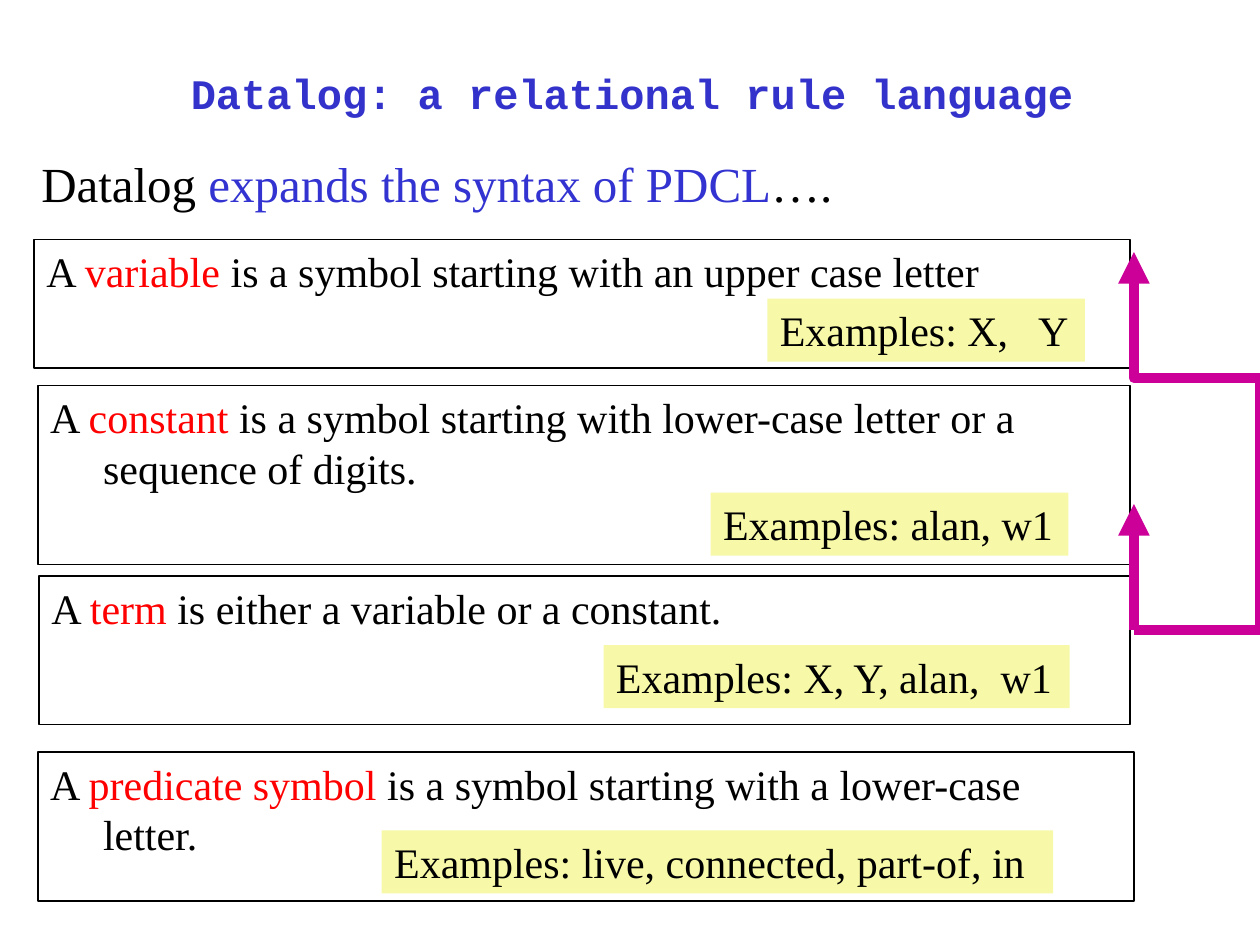
from lxml.etree import SubElement
from pptx import Presentation
from pptx.dml.color import RGBColor
from pptx.enum.shapes import MSO_SHAPE as Preset
from pptx.enum.text import MSO_ANCHOR as Anchor, PP_ALIGN as Align
from pptx.oxml.ns import qn
from pptx.util import Inches, Pt

THEME = {
    "title_font": "Courier New", "body_font": "Times New Roman",
    "body_size": 24, "lead_size": 28, "border": 1, "arrow": 6,
    "title": "3333CC", "lead": "3233D0", "term": "FF0000", "ink": "000000",
    "paper": "FFFFFF", "example": "F7F9A9", "link": "CC0099",
}
TITLE = "Datalog: a relational rule language"
LEAD = [("Datalog ", "ink"), ("expands the syntax of PDCL", "lead"), ("….", "ink")]

# term, rest of the definition, its box, example, example's (left, top, width)
DEFINITIONS = [
    ("variable", "is a symbol starting with an upper case letter",
     (0.27, 1.9, 8.7, 1.02), "X,   Y", (6.09, 2.37, 2.52)),
    ("constant", "is a symbol starting with lower-case letter or a sequence of digits.",
     (0.3, 3.06, 8.67, 1.42), "alan, w1", (5.64, 3.91, 2.84)),
    ("term", "is either a variable or a constant.",
     (0.31, 4.57, 8.66, 1.18), "X, Y, alan,  w1", (4.79, 5.12, 3.7)),
    ("predicate symbol", "is a symbol starting with a lower-case letter.",
     (0.3, 5.97, 8.7, 1.18), "live, connected, part-of, in", (3.03, 6.59, 5.33)),
]
EXAMPLE_HEIGHT = 0.5
HANGING = 0.42

# Bezier chains: a start, then two handles and an end for each segment
TERM_TO_CONSTANT = [(8.91, 5.19), (9.09, 4.93), (9.27, 4.67), (9.3, 4.4),
                    (9.32, 4.13), (9.17, 3.86), (9.03, 3.59)]
TERM_TO_VARIABLE = [(8.98, 5.45), (9.27, 5.43), (9.56, 5.4), (9.68, 5.01),
                    (9.79, 4.62), (9.77, 3.58), (9.68, 3.14),
                    (9.59, 2.69), (9.36, 2.52), (9.14, 2.34)]
STEPS = 16


def color(name):
    return RGBColor.from_string(THEME[name])


def write(box, spans, size, font="body_font", hanging=0):
    """Fill a box with one paragraph of (text, colour name) spans."""
    frame = box.text_frame
    frame.word_wrap = True
    para = frame.paragraphs[0]
    para.alignment = Align.LEFT
    para.font.name, para.font.size = THEME[font], Pt(size)
    if hanging:
        properties = para._p.get_or_add_pPr()
        properties.set("marL", str(Inches(hanging)))
        properties.set("indent", str(-Inches(hanging)))
    for text, ink in spans:
        span = para.add_run()
        span.text = text
        span.font.color.rgb = color(ink)
    return para


def add_panel(page, place, fill, border=None):
    box = page.shapes.add_shape(Preset.RECTANGLE, *map(Inches, place))
    box.shadow.inherit = False
    box.fill.solid()
    box.fill.fore_color.rgb = color(fill)
    if border:
        box.line.color.rgb = color(border)
        box.line.width = Pt(THEME["border"])
    else:
        box.line.fill.background()
    box.text_frame.vertical_anchor = Anchor.TOP
    return box


def sample(chain):
    """Points along a chain of cubic Bezier segments."""
    points = [chain[0]]
    for first in range(0, len(chain) - 1, 3):
        segment = chain[first:first + 4]
        for step in range(1, STEPS + 1):
            t = step / STEPS
            weights = ((1 - t) ** 3, 3 * t * (1 - t) ** 2, 3 * t * t * (1 - t), t ** 3)
            points.append(tuple(sum(w * p[axis] for w, p in zip(weights, segment))
                                for axis in (0, 1)))
    return points


def add_curved_arrow(page, chain):
    start, *rest = sample(chain)
    builder = page.shapes.build_freeform(*start, scale=Inches(1))
    builder.add_line_segments(rest, close=False)
    arrow = builder.convert_to_shape()
    arrow.shadow.inherit = False
    arrow.fill.background()
    arrow.line.color.rgb = color("link")
    arrow.line.width = Pt(THEME["arrow"])
    line = arrow.line._get_or_add_ln()
    SubElement(line, qn("a:round"))
    SubElement(line, qn("a:tailEnd"), type="triangle")


def main():
    deck = Presentation()
    deck.slide_width, deck.slide_height = Inches(10), Inches(7.5)
    page = deck.slides.add_slide(deck.slide_layouts[6])

    title = page.shapes.add_textbox(*map(Inches, (0.35, 0.36, 9.33, 0.75)))
    title.text_frame.vertical_anchor = Anchor.MIDDLE
    para = write(title, [(TITLE, "title")], THEME["body_size"], "title_font")
    para.alignment, para.font.bold = Align.CENTER, True

    for term, meaning, place, _, _ in DEFINITIONS:
        box = add_panel(page, place, "paper", "ink")
        spans = [("A ", "ink"), (term + " ", "term"), (meaning, "ink")]
        write(box, spans, THEME["body_size"], hanging=HANGING)

    lead = page.shapes.add_textbox(*map(Inches, (0.23, 1.17, 9.25, 1.26)))
    write(lead, LEAD, THEME["lead_size"], hanging=0.38)

    for _, _, _, example, place in DEFINITIONS:
        box = add_panel(page, (*place, EXAMPLE_HEIGHT), "example")
        box.text_frame.margin_right = 0
        write(box, [("Examples: " + example, "ink")], THEME["body_size"])

    for chain in (TERM_TO_CONSTANT, TERM_TO_VARIABLE):
        add_curved_arrow(page, chain)
    deck.save("out.pptx")


if __name__ == "__main__":
    main()
